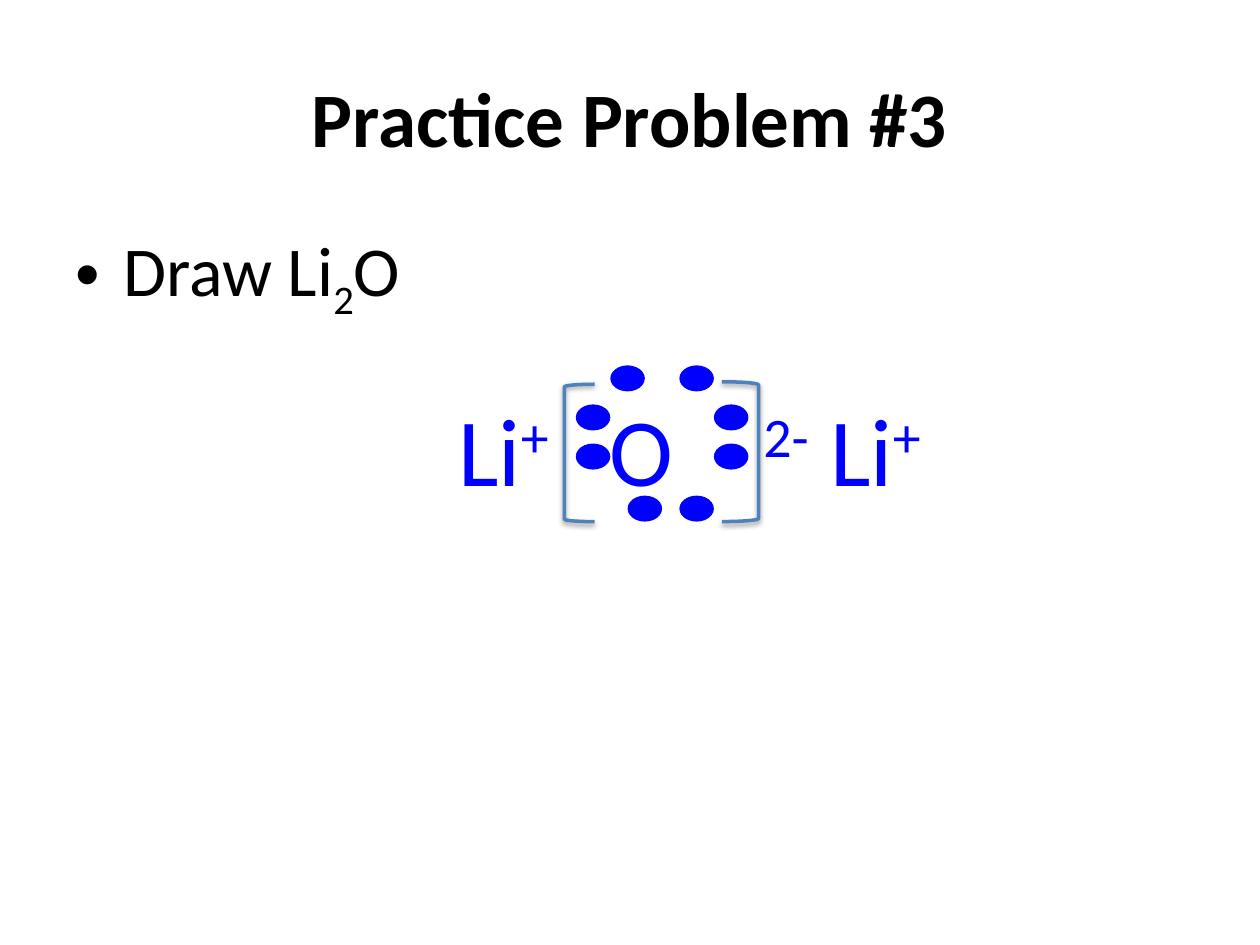
from lxml import etree
from pptx import Presentation
from pptx.dml.color import RGBColor
from pptx.enum.shapes import MSO_SHAPE
from pptx.enum.text import MSO_ANCHOR, PP_ALIGN
from pptx.oxml import parse_xml
from pptx.oxml.ns import nsdecls, qn
from pptx.util import Emu, Inches, Pt

OVAL = MSO_SHAPE.OVAL
LEFT_BRACKET, RIGHT_BRACKET = MSO_SHAPE.LEFT_BRACKET, MSO_SHAPE.RIGHT_BRACKET
TOP, MIDDLE = MSO_ANCHOR.TOP, MSO_ANCHOR.MIDDLE
LEFT, CENTER = PP_ALIGN.LEFT, PP_ALIGN.CENTER

BLACK, ION_BLUE, BRACKET_BLUE = "000000", "0000FF", "4F81BD"
SUPER, SUB = 30000, -25000

# Electron dots around the O: (column, row) on a 10 x 12 grid, each 2 x 2
DOT_COLUMNS, DOT_ROWS, DOT_SPAN = 10, 12, 2
ELECTRONS = [(3, 10), (6, 10), (2, 0), (6, 0), (0, 3), (0, 6), (8, 3), (8, 6)]


def color(hex_value):
    return RGBColor.from_string(hex_value)


def inches(*box):
    return [Inches(value) for value in box]


def add_text(slide, box, pieces, font, anchor=TOP, align=LEFT):
    """Place one paragraph of (text, baseline shift) pieces in the box."""
    frame = slide.shapes.add_textbox(*inches(*box)).text_frame
    frame.word_wrap = True
    frame.vertical_anchor = anchor
    paragraph = frame.paragraphs[0]
    paragraph.alignment = align
    for text, baseline in pieces:
        run = paragraph.add_run()
        run.text = text
        run.font.color.rgb = color(font["color"])
        for name, value in font["format"].items():
            setattr(run.font, name, value)
        if baseline:
            run.font._element.set("baseline", str(baseline))
    return paragraph


def add_title(slide, box):
    font = {"color": BLACK,
            "format": {"name": "Calibri", "size": Pt(44), "bold": True}}
    add_text(slide, box, [("Practice Problem #3", 0)], font, MIDDLE, CENTER)


def add_task(slide, box):
    font = {"color": BLACK, "format": {"name": "Calibri", "size": Pt(40)}}
    task = add_text(slide, box, [("Draw Li", 0), ("2", SUB), ("O", 0)], font)
    # Bullet with a hanging indent
    properties = task._p.get_or_add_pPr()
    indent = Inches(0.38)
    properties.set("marL", str(indent))
    properties.set("indent", str(-indent))
    etree.SubElement(properties, qn("a:buFont")).set("typeface", "Arial")
    etree.SubElement(properties, qn("a:buChar")).set("char", "•")


def add_formula(slide, box):
    font = {"color": ION_BLUE, "format": {"name": "Calibri", "size": Pt(55)}}
    pieces = [("Li", 0), ("+", SUPER), ("\tO\t", 0), ("2-", SUPER),
              (" Li", 0), ("+", SUPER)]
    formula = add_text(slide, box, pieces, font)
    # Tab stops leave room for the dots and brackets
    tabs = etree.SubElement(formula._p.get_or_add_pPr(), qn("a:tabLst"))
    for stop in (1.2, 2.42):
        tab = etree.SubElement(tabs, qn("a:tab"))
        tab.set("pos", str(Inches(stop)))
        tab.set("algn", "l")


def add_electrons(slide, box):
    left, top, width, height = inches(*box)
    column, row = width / DOT_COLUMNS, height / DOT_ROWS
    octet = slide.shapes.add_group_shape()
    for x, y in ELECTRONS:
        electron = octet.shapes.add_shape(
            OVAL, Emu(round(left + x * column)), Emu(round(top + y * row)),
            Emu(round(DOT_SPAN * column)), Emu(round(DOT_SPAN * row)))
        electron.shadow.inherit = False
        electron.fill.solid()
        electron.fill.fore_color.rgb = color(ION_BLUE)
        electron.line.fill.background()


def add_bracket(slide, kind, box):
    bracket = slide.shapes.add_shape(kind, *inches(*box))
    bracket.fill.background()
    bracket.line.color.rgb = color(BRACKET_BLUE)
    bracket.line.width = Pt(2)
    # Soft shadow straight below
    bracket.shadow.inherit = False
    bracket._element.spPr.find(qn("a:effectLst")).append(parse_xml(
        f'<a:outerShdw {nsdecls("a")} blurRad="{Pt(3.1)}" dist="{Pt(1.6)}" '
        f'dir="5400000" rotWithShape="0"><a:srgbClr val="{BLACK}">'
        '<a:alpha val="38000"/></a:srgbClr></a:outerShdw>'))


def add_lewis_structure(slide, left, top):
    """Formula, octet and brackets, placed from the formula's corner."""
    add_formula(slide, (left, top, 5.06, 1.03))
    add_electrons(slide, (left + 1.03, top - 0.15, 1.37, 1.24))
    add_bracket(slide, LEFT_BRACKET, (left + 0.94, top, 0.24, 1.09))
    add_bracket(slide, RIGHT_BRACKET, (left + 2.19, top - 0.02, 0.29, 1.11))


def main():
    deck = Presentation()
    deck.slide_width, deck.slide_height = inches(10, 7.5)
    slide = deck.slides.add_slide(deck.slide_layouts[6])
    add_title(slide, (0.5, 0.3, 9, 1.25))
    add_task(slide, (0.5, 1.75, 9, 4.95))
    add_lewis_structure(slide, 3.54, 3.05)
    deck.save("out.pptx")


if __name__ == "__main__":
    main()
